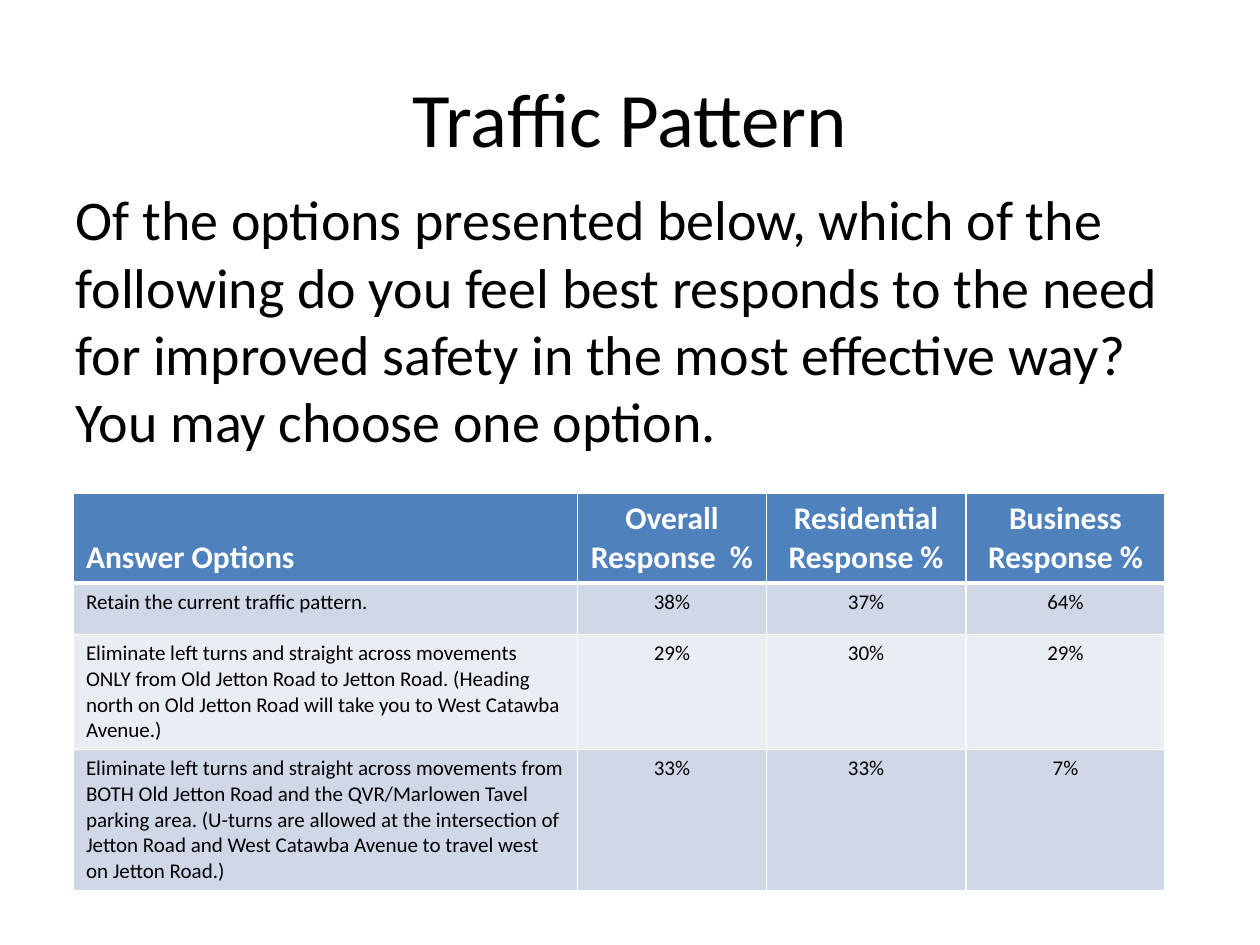
from dataclasses import dataclass
from lxml.etree import SubElement as Sub
from pptx import Presentation
from pptx.dml.color import RGBColor as Rgb
from pptx.enum.text import MSO_ANCHOR as Anchor, PP_ALIGN as Align
from pptx.oxml.ns import qn
from pptx.util import Cm, Pt


@dataclass(frozen=True)
class Theme:
    font: str = "Calibri"
    ink: str = "000000"
    white: str = "FFFFFF"
    head: str = "4F81BD"
    bands: tuple = ("D0D8E8", "E9EDF4")
    title: int = 44
    body: int = 32
    label: int = 18
    cell: int = 12
    thin: int = 1
    thick: int = 3


THEME = Theme()
COLS = (10.16, 3.81, 4.02, 4.02)
ROWS = (1.78, 1.04, 2.31, 2.82)
QUERY = ("Of the options presented below, which of the following do you feel best "
         "responds to the need for improved safety in the most effective way? "
         "You may choose one option.")
DATA = (
    ("Answer Options", "Overall\nResponse  %", "Residential\nResponse %",
     "Business\nResponse %"),
    ("Retain the current traffic pattern.", "38%", "37%", "64%"),
    ("Eliminate left turns and straight across movements ONLY from Old Jetton Road "
     "to Jetton Road. (Heading north on Old Jetton Road will take you to West "
     "Catawba Avenue.)", "29%", "30%", "29%"),
    ("Eliminate left turns and straight across movements from BOTH Old Jetton Road "
     "and the QVR/Marlowen Tavel parking area. (U-turns are allowed at the "
     "intersection of Jetton Road and West Catawba Avenue to travel west on Jetton "
     "Road.)", "33%", "33%", "7%"),
)


def write(frame, text, size, color, align, bold=False):
    frame.text = text
    style = {"name": THEME.font, "size": Pt(size), "bold": bold}
    for para in frame.paragraphs:
        para.alignment = align
        for run in para.runs:
            for key, value in style.items():
                setattr(run.font, key, value)
            run.font.color.rgb = Rgb.from_string(color)


def place(shape, left, top, width, height):
    box = {"left": left, "top": top, "width": width, "height": height}
    for key, value in box.items():
        setattr(shape, key, Cm(value))


def plain(frame):
    for para in frame.paragraphs:
        props = para._p.get_or_add_pPr()
        props.set("marL", "0")
        props.set("indent", "0")
        Sub(props, qn("a:buNone"))


def edge(cell, row):
    props = cell._tc.get_or_add_tcPr()
    wide = {"T": row == 1, "B": row == 0}
    for side in "LRTB":
        width = THEME.thick if wide.get(side) else THEME.thin
        line = Sub(props, qn(f"a:ln{side}"), w=str(Pt(width)))
        Sub(Sub(line, qn("a:solidFill")), qn("a:srgbClr"), val=THEME.white)


def fill_cell(cell, text, row, col):
    head = row == 0
    edge(cell, row)
    cell.fill.solid()
    tint = THEME.head if head else THEME.bands[(row - 1) % 2]
    cell.fill.fore_color.rgb = Rgb.from_string(tint)
    cell.vertical_anchor = Anchor.BOTTOM if head else Anchor.TOP
    write(cell.text_frame, text,
          THEME.label if head else THEME.cell,
          THEME.white if head else THEME.ink,
          Align.CENTER if col else Align.LEFT, head)


def add_grid(slide):
    table = slide.shapes.add_table(
        len(ROWS), len(COLS), Cm(1.48), Cm(9.95),
        Cm(sum(COLS)), Cm(sum(ROWS))).table
    for col, width in zip(table.columns, COLS):
        col.width = Cm(width)
    for row, height in zip(table.rows, ROWS):
        row.height = Cm(height)
    for r, texts in enumerate(DATA):
        for c, text in enumerate(texts):
            fill_cell(table.cell(r, c), text, r, c)


def main():
    deck = Presentation()
    deck.slide_width, deck.slide_height = Cm(25.4), Cm(19.05)
    slide = deck.slides.add_slide(deck.slide_layouts[1])
    title, body = slide.placeholders
    place(title, 1.27, 0.76, 22.86, 3.18)
    write(title.text_frame, "Traffic Pattern", THEME.title, THEME.ink, Align.CENTER)
    title.text_frame.vertical_anchor = Anchor.MIDDLE
    place(body, 1.27, 3.6, 22.86, 5.92)
    write(body.text_frame, QUERY, THEME.body, THEME.ink, Align.LEFT)
    plain(body.text_frame)
    add_grid(slide)
    deck.save("out.pptx")


if __name__ == "__main__":
    main()
